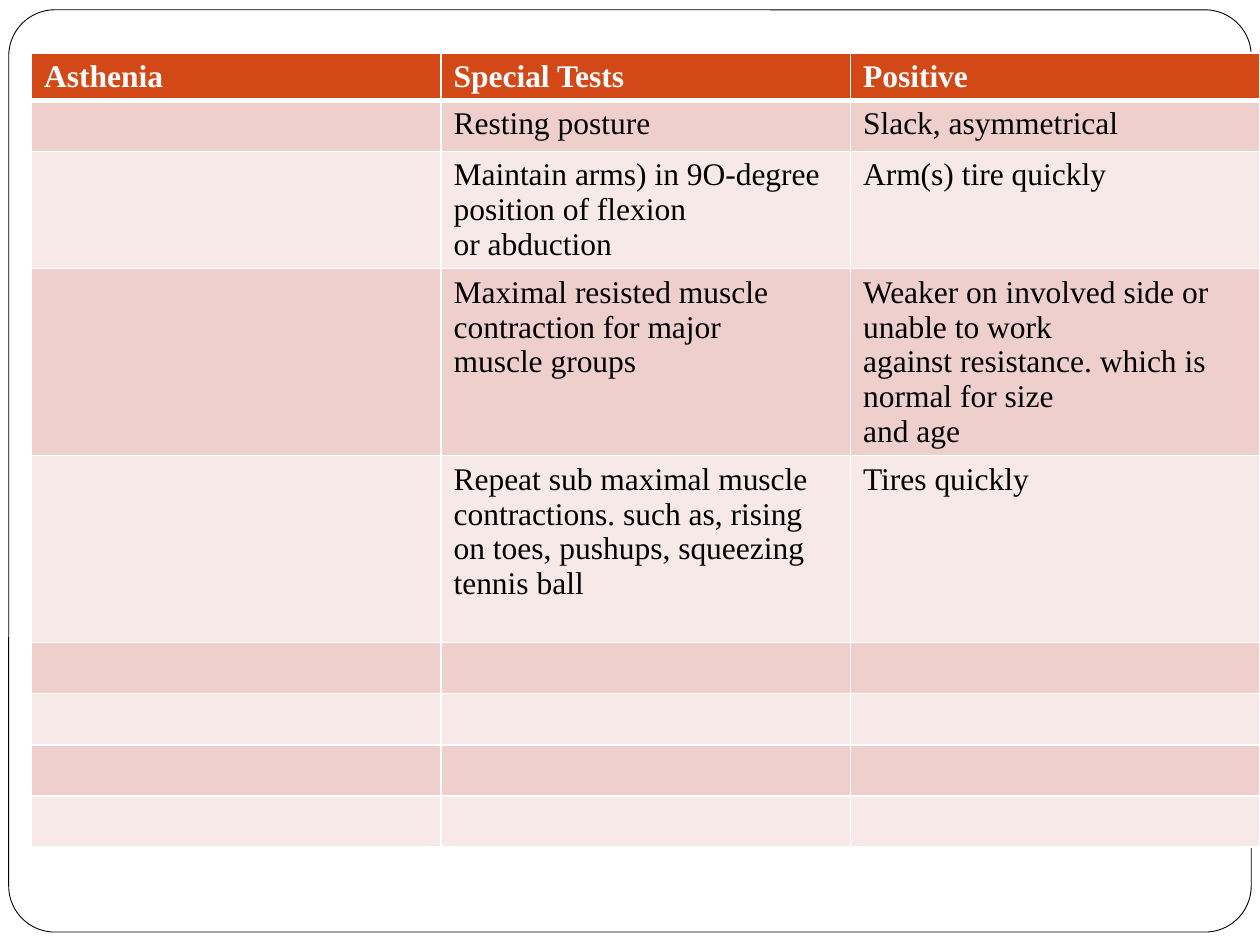
"""Build a slide with a table of special tests for asthenia."""
from lxml.etree import SubElement
from pptx import Presentation
from pptx.dml.color import RGBColor
from pptx.enum.shapes import MSO_SHAPE
from pptx.oxml.ns import qn
from pptx.util import Pt

FONT = "Times New Roman"
WHITE = RGBColor(0xFF, 0xFF, 0xFF)
BLACK = RGBColor(0, 0, 0)
ORANGE = RGBColor(0xD3, 0x48, 0x17)
DARK_BAND = RGBColor(0xEF, 0xCF, 0xCC)
LIGHT_BAND = RGBColor(0xF7, 0xE9, 0xE8)

HEADINGS = ("Asthenia", "Special Tests", "Positive")
TESTS = [
    ("Resting posture", "Slack, asymmetrical"),
    ("Maintain arms) in 9O-degree position of flexion\nor abduction",
     "Arm(s) tire quickly"),
    ("Maximal resisted muscle contraction for major\nmuscle groups",
     "Weaker on involved side or unable to work\n"
     "against resistance. which is normal for size\nand age"),
    ("Repeat sub maximal muscle contractions. such as, rising on toes, "
     "pushups, squeezing tennis ball", "Tires quickly"),
]
EMPTY_ROWS = 4
ROWS = [HEADINGS] + [("", *test) for test in TESTS] + [("", "", "")] * EMPTY_ROWS
ROW_HEIGHT = 27
TALL_ROWS = {2: 67, 3: 106.8, 4: 106.8}
COLUMN_WIDTH = 234


def write_text(text_frame, text, size=18, color=BLACK, bold=False):
    text_frame.text = text
    for paragraph in text_frame.paragraphs:
        for run in paragraph.runs:
            run.font.name = FONT
            run.font.size = Pt(size)
            run.font.bold = bold
            run.font.color.rgb = color


def set_borders(cell, top=1, bottom=1):
    properties = cell._tc.get_or_add_tcPr()
    for side, width in (("L", 1), ("R", 1), ("T", top), ("B", bottom)):
        line = SubElement(properties, qn(f"a:ln{side}"), w=str(Pt(width)))
        fill = SubElement(line, qn("a:solidFill"))
        SubElement(fill, qn("a:srgbClr"), val=str(WHITE))


def add_frame(slide):
    frame = slide.shapes.add_shape(
        MSO_SHAPE.ROUNDED_RECTANGLE, Pt(5), Pt(5.6), Pt(710), Pt(527))
    frame.adjustments[0] = 0.05
    frame.shadow.inherit = False
    frame.fill.solid()
    frame.fill.fore_color.rgb = WHITE
    frame.line.color.rgb = BLACK
    frame.line.width = Pt(0.5)


def add_tests_table(slide):
    heights = [TALL_ROWS.get(index, ROW_HEIGHT) for index in range(len(ROWS))]
    table = slide.shapes.add_table(
        len(ROWS), len(HEADINGS), Pt(18), Pt(30.2),
        Pt(COLUMN_WIDTH * len(HEADINGS)), Pt(sum(heights))).table
    for column in table.columns:
        column.width = Pt(COLUMN_WIDTH)
    for row_index, texts in enumerate(ROWS):
        header = row_index == 0
        band = DARK_BAND if row_index % 2 else LIGHT_BAND
        table.rows[row_index].height = Pt(heights[row_index])
        for column_index, text in enumerate(texts):
            cell = table.cell(row_index, column_index)
            set_borders(cell, top=3 if row_index == 1 else 1,
                        bottom=3 if header else 1)
            cell.fill.solid()
            cell.fill.fore_color.rgb = ORANGE if header else band
            write_text(cell.text_frame, text, bold=header,
                       color=WHITE if header else BLACK)


def main():
    presentation = Presentation()
    presentation.slide_width, presentation.slide_height = Pt(720), Pt(540)
    slide = presentation.slides.add_slide(presentation.slide_layouts[6])
    add_frame(slide)
    add_tests_table(slide)
    presentation.save("out.pptx")


if __name__ == "__main__":
    main()
